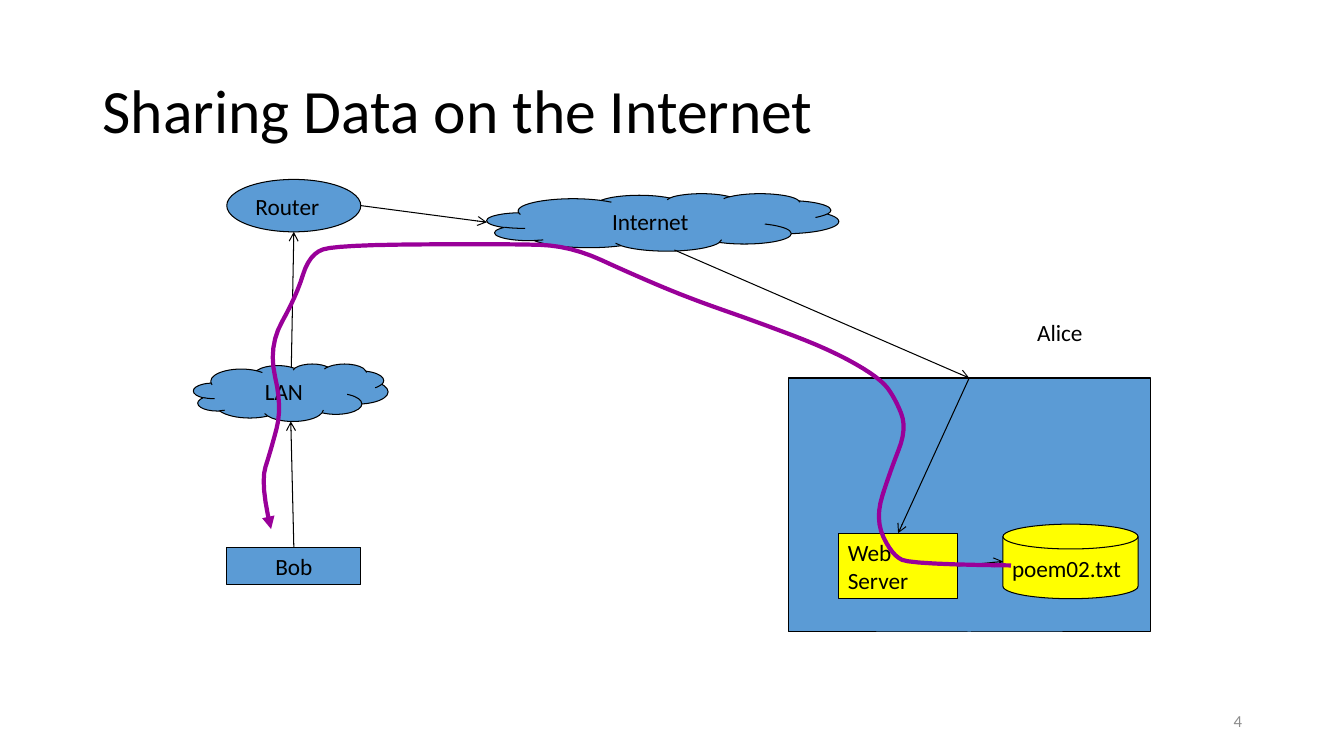
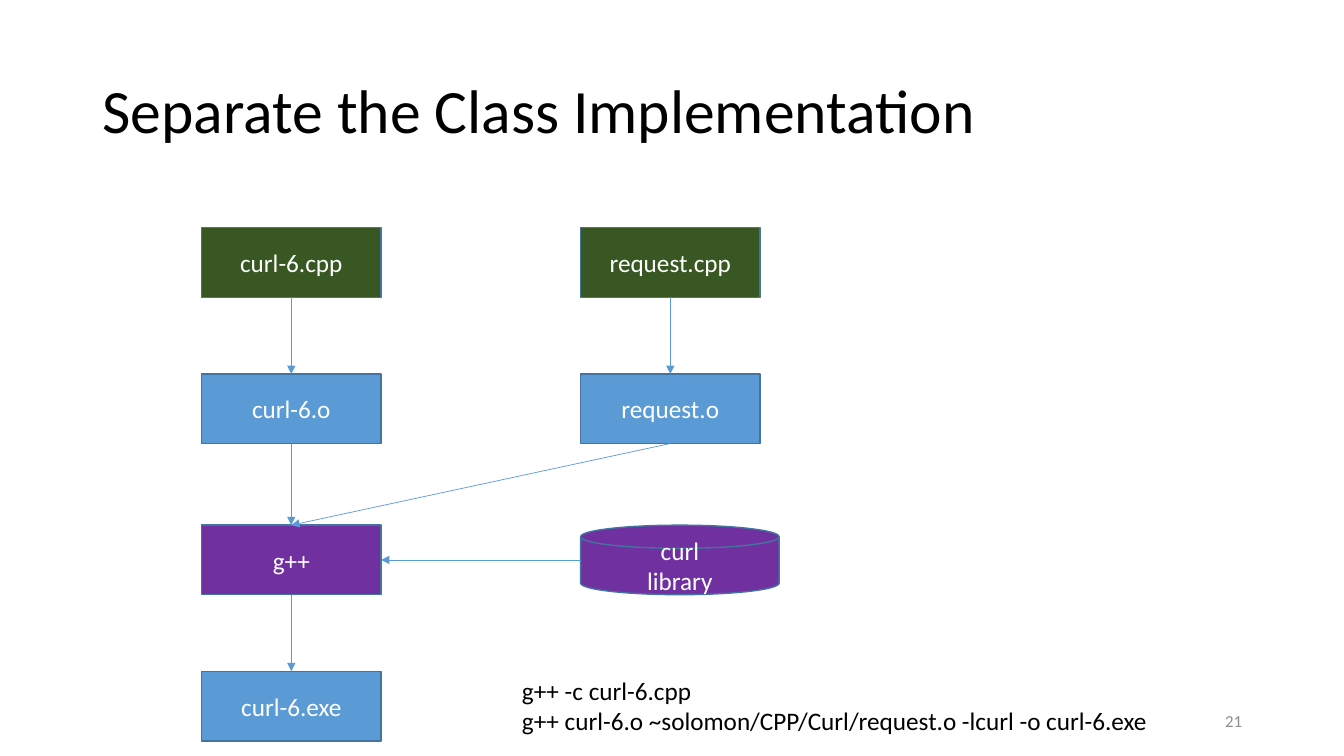
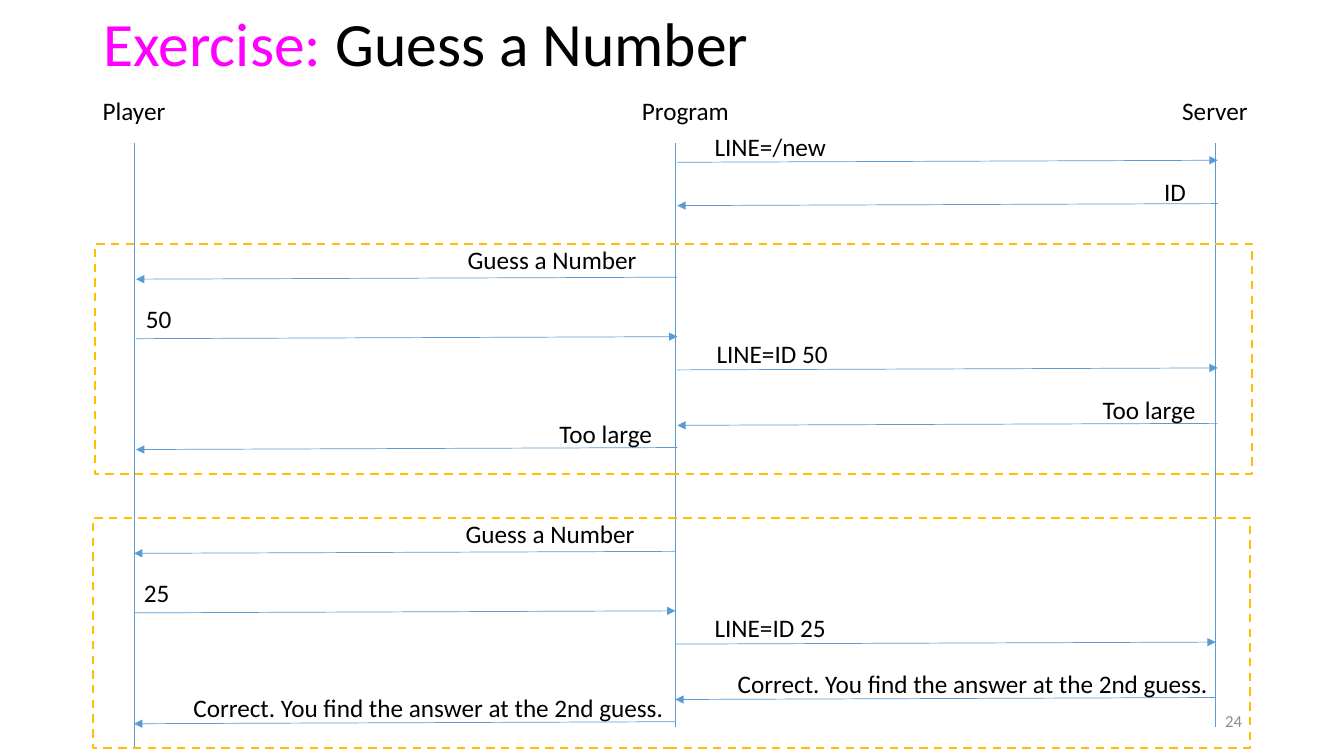
from collections import namedtuple
from itertools import chain

from lxml import etree
from pptx import Presentation
from pptx import util as u
from pptx.dml.color import RGBColor
from pptx.enum import dml, shapes, text
from pptx.oxml.ns import qn

CELL = u.Inches(0.1)
COLUMNS, ROWS = 133.33, 75
FONT = "Calibri"
COLORS = {
    "ink": "000000",
    "paper": "FFFFFF",
    "blue": "5B9BD5",
    "outline": "43739E",
    "yellow": "FFFF00",
    "green": "385723",
    "purple": "7030A0",
    "route": "990099",
    "accent": "FF00FF",
    "frame": "FFC000",
    "number": "8C8C8C",
}
SHAPE = shapes.MSO_SHAPE
ALIGN = text.PP_ALIGN
ANCHOR = text.MSO_ANCHOR
TOP, LEFT, BOTTOM, RIGHT = range(4)
SIDE_SHARES = {TOP: (0.5, 0), LEFT: (0, 0.5), BOTTOM: (0.5, 1), RIGHT: (1, 0.5)}
LABEL_HEIGHT = 4

ROUTE_BENDS = {
    "web server": [(100.3, 56.1), (90.5, 56), (88.5, 55.1), (86.8, 51.5)],
    "computer": [(88.3, 46.8), (90, 42.5), (88.8, 39.5), (87.3, 37.5)],
    "uplink": [(82.4, 34.7), (75, 31.9), (68.4, 29.6), (62.7, 27.2)],
    "internet": [(56.6, 24.4), (50.6, 24.2)],
    "router": [(33.4, 24.3), (30.7, 25.2), (29.4, 29.4), (26.6, 34.4)],
    "lan": [(28, 40.4), (26.9, 44.6), (25.8, 48), (26.9, 52.5)],
}
CURVE_STEPS = 6

BUILD_COLUMNS = {"program": 20, "request": 57.6}
BUILD_ROWS = {"source": 22.6, "object": 37.1, "compiler": 52.1, "result": 66.6}
BUILD_WIDTH, BUILD_HEIGHT = 17.8, 6.9

LIFELINES = {"Player": 13.3, "Program": 67, "Server": 120.6}
LIFELINE_TOP, MESSAGE_RISE = 14.2, 0.2

Joint = namedtuple("Joint", "shape side")
Message = namedtuple("Message", "sender receiver row words width gap lift",
                     defaults=(3.6,))


def cells(*counts):
    return [round(count * CELL) for count in counts]


def rgb(name):
    return RGBColor.from_string(COLORS[name])


def format_text(frame, size, color="ink", align=ALIGN.LEFT, anchor=ANCHOR.TOP):
    frame.vertical_anchor = anchor
    for paragraph in frame.paragraphs:
        paragraph.alignment = align
        for run in paragraph.runs:
            run.font.name = FONT
            run.font.size = u.Pt(size)
            run.font.color.rgb = rgb(color)


def add_label(slide, area, words, size=18, wrap=False, **style):
    frame = slide.shapes.add_textbox(*cells(*area)).text_frame
    frame.text = words
    frame.word_wrap = wrap
    format_text(frame, size, **style)
    return frame


def add_title(slide, area, words, accent):
    frame = add_label(slide, area, accent or words, 44, True, anchor=ANCHOR.MIDDLE)
    paragraph = frame.paragraphs[0]
    paragraph.line_spacing = 0.9
    if accent:
        paragraph.add_run().text = words
        format_text(frame, 44, anchor=ANCHOR.MIDDLE)
        paragraph.runs[0].font.color.rgb = rgb("accent")


def add_page(deck, number, words, area=(9.2, 4, 115, 14.5), accent=""):
    slide = deck.slides.add_slide(deck.slide_layouts[6])
    add_title(slide, area, words, accent)
    add_label(slide, (94.2, 69.5, 30, LABEL_HEIGHT), str(number), 12, True,
              color="number", align=ALIGN.RIGHT, anchor=ANCHOR.MIDDLE)
    return slide


def add_node(slide, kind, area, fill=None, line="ink", width=0.75):
    node = slide.shapes.add_shape(kind, *cells(*area))
    node.shadow.inherit = False
    if fill:
        node.fill.solid()
        node.fill.fore_color.rgb = rgb(fill)
    else:
        node.fill.background()
    node.line.color.rgb = rgb(line)
    node.line.width = u.Pt(width)
    return node


def add_host(slide, kind, area, words, fill="blue", align=ALIGN.CENTER):
    host = add_node(slide, kind, area, fill)
    frame = host.text_frame
    frame.text = words
    frame.word_wrap = True
    frame.margin_left = frame.margin_right = u.Inches(0.09)
    format_text(frame, 16.6, align=align)
    return host


def add_arrowhead(line, kind):
    outline = line.element.spPr.find(qn("a:ln"))
    etree.SubElement(outline, qn("a:tailEnd"), type=kind)


def locate(end):
    if not isinstance(end, Joint):
        return cells(*end)
    across, down = SIDE_SHARES[end.side]
    node = end.shape
    return [round(node.left + across * node.width), round(node.top + down * node.height)]


def is_rectangle_side(end):
    return isinstance(end, Joint) and end.shape.auto_shape_type == SHAPE.RECTANGLE


def add_line(slide, start, end, color="blue", width=0.5, arrow="triangle"):
    line = slide.shapes.add_connector(
        shapes.MSO_CONNECTOR.STRAIGHT, *locate(start), *locate(end))
    if is_rectangle_side(start):
        line.begin_connect(*start)
    if is_rectangle_side(end):
        line.end_connect(*end)
    line.line.color.rgb = rgb(color)
    line.line.width = u.Pt(width)
    if arrow:
        add_arrowhead(line, arrow)
    etree.SubElement(line.element.spPr, qn("a:effectLst"))


def blend(start, end, share):
    return tuple(a + (b - a) * share for a, b in zip(start, end))


def smooth(bends):
    middles = [blend(a, b, 0.5) for a, b in zip(bends[1:], bends[2:-1])]
    joins = [bends[0], *middles, bends[-1]]
    curve = [bends[0]]
    for start, bend, end in zip(joins, bends[1:-1], joins[1:]):
        for step in range(1, CURVE_STEPS + 1):
            share = step / CURVE_STEPS
            curve.append(blend(blend(start, bend, share), blend(bend, end, share), share))
    return curve


def add_route(slide, bends):
    start, *rest = [cells(*point) for point in smooth(bends)]
    builder = slide.shapes.build_freeform(*start)
    builder.add_line_segments(rest, close=False)
    route = builder.convert_to_shape()
    route.shadow.inherit = False
    route.fill.background()
    route.line.color.rgb = rgb("route")
    route.line.width = u.Pt(3)
    add_arrowhead(route, "triangle")


def build_sharing(deck):
    slide = add_page(deck, 4, "Sharing Data on the Internet")
    computer = add_node(slide, SHAPE.RECTANGLE, (78.2, 37.5, 35.9, 25.2), "blue")
    add_label(slide, (101.9, 31.1, 12.1, 3.8), "Alice", 16.6, True)
    poem = add_host(slide, SHAPE.FLOWCHART_MAGNETIC_DISK, (99.5, 52, 13.4, 7.4),
                    "poem02.txt", "yellow", ALIGN.LEFT)
    server = add_host(slide, SHAPE.RECTANGLE, (83.2, 52.9, 11.8, 6.5),
                      "Web Server", "yellow", ALIGN.LEFT)
    internet = add_host(slide, SHAPE.CLOUD, (48.3, 19.2, 34.9, 5.7), "Internet")
    router = add_host(slide, SHAPE.OVAL, (22.5, 17.8, 13.3, 5.2), "Router",
                      align=ALIGN.LEFT)
    bob = add_host(slide, SHAPE.RECTANGLE, (22.5, 54.3, 13.3, 3.7), "Bob")
    lan = add_host(slide, SHAPE.CLOUD, (19.2, 36.1, 19.3, 5.7), "LAN")
    lan_crest, internet_base = (28.9, 36.5), (66.9, 24.8)
    hops = [
        (Joint(bob, TOP), Joint(lan, BOTTOM)),
        (lan_crest, Joint(router, BOTTOM)),
        (Joint(router, RIGHT), Joint(internet, LEFT)),
        (internet_base, Joint(computer, TOP)),
        (Joint(computer, TOP), Joint(server, TOP)),
        (Joint(server, RIGHT), Joint(poem, LEFT)),
    ]
    for start, end in hops:
        add_line(slide, start, end, "ink", 0.75, "arrow")
    add_route(slide, list(chain.from_iterable(ROUTE_BENDS.values())))


def add_build_step(slide, column, row, words, fill,
                   kind=SHAPE.RECTANGLE, width=BUILD_WIDTH):
    area = BUILD_COLUMNS[column], BUILD_ROWS[row], width, BUILD_HEIGHT
    step = add_node(slide, kind, area, fill, "outline", 1)
    step.text_frame.text = words
    format_text(step.text_frame, 18, "paper", ALIGN.CENTER, ANCHOR.MIDDLE)
    return step


def build_compilation(deck):
    slide = add_page(deck, 21, "Separate the Class Implementation")
    steps = {
        words: add_build_step(slide, column, row, words, fill)
        for column, row, words, fill in [
            ("program", "source", "curl-6.cpp", "green"),
            ("program", "object", "curl-6.o", "blue"),
            ("request", "source", "request.cpp", "green"),
            ("request", "object", "request.o", "blue"),
            ("program", "compiler", "g++", "purple"),
            ("program", "result", "curl-6.exe", "blue"),
        ]
    }
    library = add_build_step(slide, "request", "compiler", "curl\nlibrary", "purple",
                             SHAPE.FLOWCHART_MAGNETIC_DISK, 19.7)
    for upper, lower in [
        ("curl-6.cpp", "curl-6.o"),
        ("request.cpp", "request.o"),
        ("curl-6.o", "g++"),
        ("request.o", "g++"),
        ("g++", "curl-6.exe"),
    ]:
        add_line(slide, Joint(steps[upper], BOTTOM), Joint(steps[lower], TOP))
    add_line(slide, Joint(library, LEFT), Joint(steps["g++"], RIGHT))
    add_label(slide, (50.8, 66.5, 65.3, 7.1),
              "g++ -c curl-6.cpp\n"
              "g++ curl-6.o ~solomon/CPP/Curl/request.o -lcurl -o curl-6.exe", wrap=True)


def add_lifeline(slide, name, bottom, label_column, label_width):
    column = LIFELINES[name]
    add_line(slide, (column, LIFELINE_TOP), (column, bottom), arrow=None)
    add_label(slide, (label_column, 9, label_width, LABEL_HEIGHT), name)


def add_message(slide, message, top=0, shift=0.0):
    sender = LIFELINES[message.sender] + shift
    receiver = LIFELINES[message.receiver] + shift
    row = top + message.row
    if sender < receiver:
        start, end = (sender, row), (receiver, row - MESSAGE_RISE)
        label_column = sender + message.gap
    else:
        start, end = (sender, row - MESSAGE_RISE), (receiver, row)
        label_column = sender - message.gap - message.width
    add_line(slide, start, end)
    area = label_column, row - message.lift, message.width, LABEL_HEIGHT
    add_label(slide, area, message.words)


def add_round(slide, top, shift, guess, answer, answer_width, server_gap, program_gap):
    for message in [
        Message("Program", "Player", 3.5, "Guess a Number", 19, 2.8, 4),
        Message("Player", "Program", 9.4, guess, 4.6, 0, 4),
        Message("Program", "Server", 12.5, "LINE=ID " + guess, 13.2, 2.9),
        Message("Server", "Program", 18, answer, answer_width, server_gap),
        Message("Program", "Player", 20.4, answer, answer_width, program_gap),
    ]:
        add_message(slide, message, top, shift)
    frame = add_node(slide, SHAPE.RECTANGLE, (9.2 + shift, top, 114.8, 22.8),
                     line="frame", width=1.5)
    frame.line.dash_style = dml.MSO_LINE.DASH


def build_exercise(deck):
    slide = add_page(deck, 24, " Guess a Number", (9.3, 0.5, 115, 8.3), "Exercise:")
    add_lifeline(slide, "Player", 74.2, 9.2, 8.3)
    add_lifeline(slide, "Program", 72.1, 62.7, 10.7)
    add_lifeline(slide, "Server", 72.1, 116.3, 8.6)
    shift = 0.2
    add_message(slide, Message("Program", "Server", 16.1, "LINE=/new", 13.2, 2.7),
                shift=shift)
    add_message(slide, Message("Server", "Program", 20.4, "ID", 4.2, 2.1, 3.4),
                shift=shift)
    add_round(slide, 24.2, shift, "50", "Too large", 11.3, 1.1, 1.4)
    add_round(slide, 51.4, 0, "25", "Correct. You find the answer at the 2nd guess.",
              49.2, -0.8, -0.4)


def main():
    deck = Presentation()
    deck.slide_width, deck.slide_height = cells(COLUMNS, ROWS)
    build_sharing(deck)
    build_compilation(deck)
    build_exercise(deck)
    deck.save("out.pptx")


if __name__ == "__main__":
    main()
